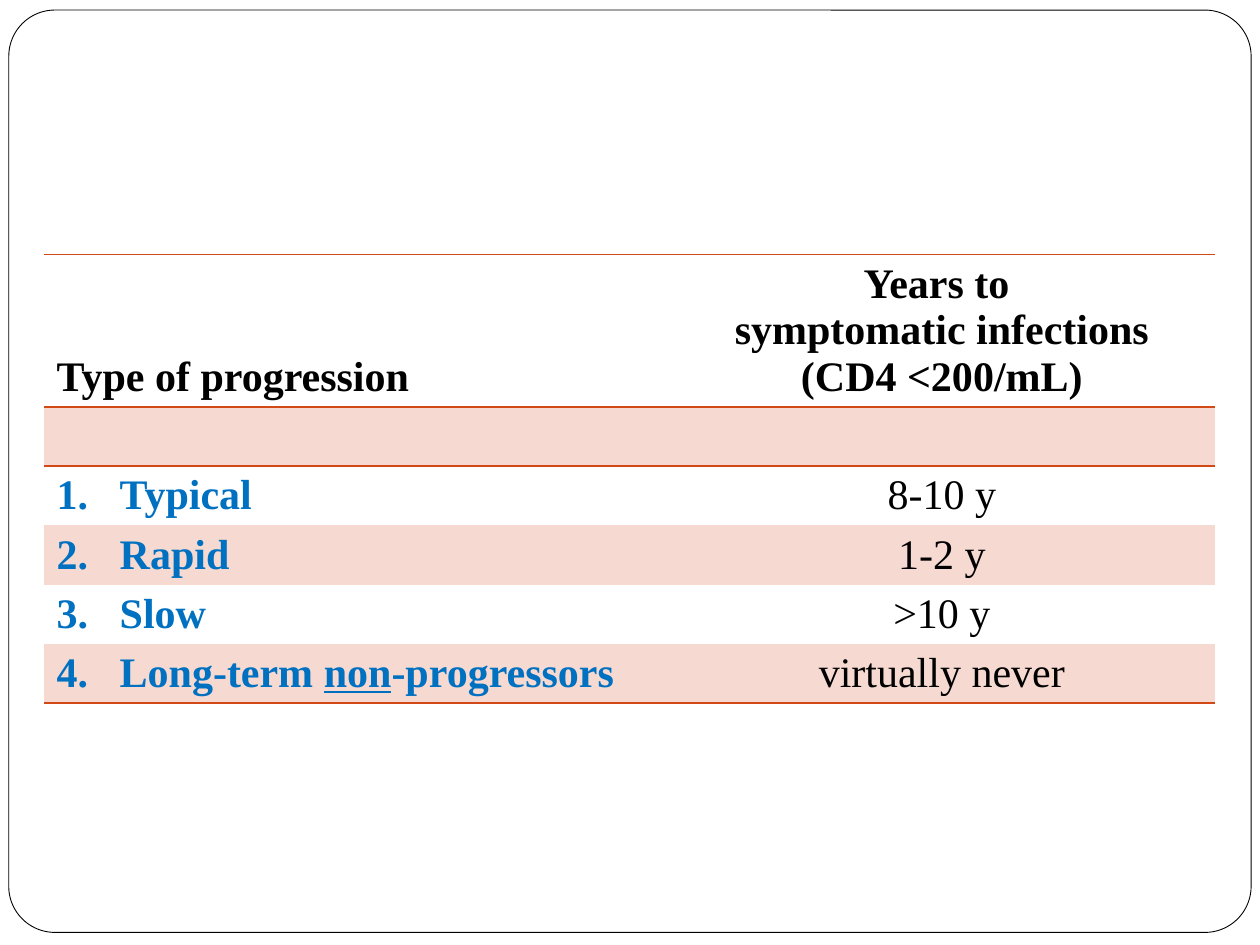
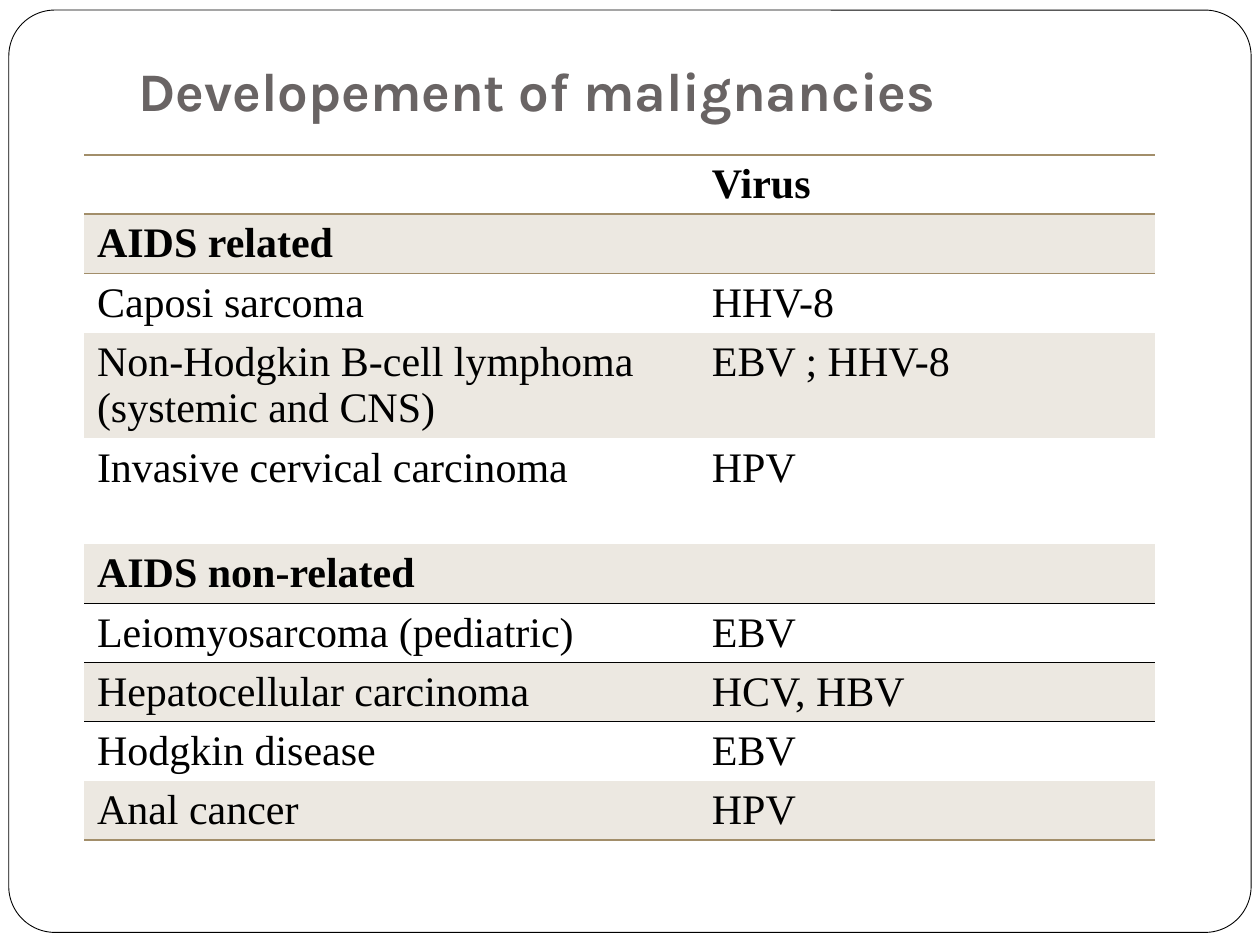
from pptx import Presentation
from pptx.dml.color import RGBColor
from pptx.enum.shapes import MSO_SHAPE
from pptx.enum.text import MSO_ANCHOR, PP_ALIGN
from pptx.oxml import parse_xml
from pptx.oxml.ns import nsdecls
from pptx.util import Inches, Pt

BLACK = RGBColor(0x00, 0x00, 0x00)
WHITE = RGBColor(0xFF, 0xFF, 0xFF)
BLUE = RGBColor(0x00, 0x70, 0xC0)
TITLE_GRAY = RGBColor(0x69, 0x64, 0x64)
ORANGE = RGBColor(0xD3, 0x48, 0x17)
ORANGE_TINT = RGBColor(0xF6, 0xDA, 0xD1)
TAN = RGBColor(0xA2, 0x8E, 0x6A)
TAN_TINT = RGBColor(0xEC, 0xE8, 0xE1)

PLAIN_TABLE_STYLE = "{2D5ABB26-0587-4C30-8999-92F81FD0307C}"
BODY_FORMAT = {"name": "Times New Roman", "size": Pt(24), "bold": False}
TITLE_FORMAT = {"name": "Karla", "size": Pt(31), "bold": True}


def add_run(paragraph, text, text_format, color):
    run = paragraph.add_run()
    run.text = text
    for attribute, value in text_format.items():
        setattr(run.font, attribute, value)
    run.font.color.rgb = color


def add_ruled_table(slide, rows, bold_rows, place, widths, heights, tint, rules):
    left, top = place
    frame = slide.shapes.add_table(
        len(rows), len(widths), Inches(left), Inches(top),
        Inches(sum(widths)), Inches(sum(heights)))
    table = frame.table
    table.first_row = table.horz_banding = False
    frame.element.xpath(".//a:tableStyleId")[0].text = PLAIN_TABLE_STYLE
    for column, width in zip(table.columns, widths):
        column.width = Inches(width)
    for index, (texts, height) in enumerate(zip(rows, heights)):
        table.rows[index].height = Inches(height)
        for cell, text in zip(table.rows[index].cells, texts):
            if index % 2:
                cell.fill.solid()
                cell.fill.fore_color.rgb = tint
            else:
                cell.fill.background()
            properties = cell._tc.get_or_add_tcPr()
            for edge, line in (("lnB", index + 1), ("lnT", index)):
                if line in rules:
                    properties.insert(0, parse_xml(
                        f'<a:{edge} {nsdecls("a")} w="12700"><a:solidFill>'
                        f'<a:srgbClr val="{rules[line]}"/></a:solidFill></a:{edge}>'))
            for number, line_text in enumerate(text.split("\n") if text else []):
                text_frame = cell.text_frame
                paragraph = text_frame.add_paragraph() if number else text_frame.paragraphs[0]
                add_run(paragraph, line_text,
                        {**BODY_FORMAT, "bold": index in bold_rows}, BLACK)
    return table


presentation = Presentation()
presentation.slide_width = Inches(10)
presentation.slide_height = Inches(7.5)

slides = []
for _ in range(2):
    slide = presentation.slides.add_slide(presentation.slide_layouts[6])
    border = slide.shapes.add_shape(
        MSO_SHAPE.ROUNDED_RECTANGLE, Inches(0.07), Inches(0.08), Inches(9.86), Inches(7.32))
    border.adjustments[0] = 0.05
    border.shadow.inherit = False
    border.fill.solid()
    border.fill.fore_color.rgb = WHITE
    border.line.color.rgb = BLACK
    border.line.width = Pt(0.5)
    slides.append(slide)
progression_slide, malignancy_slide = slides

progression_types = [
    ("Typical", "8-10 y"),
    ("Rapid", "1-2 y"),
    ("Slow", ">10 y"),
    ("Long-term |non|-progressors", "virtually never"),
]
progression_rows = [
    ("Type of progression", "Years to \nsymptomatic infections\n(CD4 <200/mL)"),
    ("", ""),
] + [("", years) for _, years in progression_types]
progression_table = add_ruled_table(
    progression_slide, progression_rows, {0}, (0.35, 2.02), (4.96, 4.33),
    [1.21] + [0.47] * 5, ORANGE_TINT, {0: ORANGE, 1: ORANGE, 6: ORANGE})
progression_table.cell(0, 0).vertical_anchor = MSO_ANCHOR.BOTTOM
for row in progression_table.rows:
    for paragraph in row.cells[1].text_frame.paragraphs:
        paragraph.alignment = PP_ALIGN.CENTER

for number, (name, _) in enumerate(progression_types, start=1):
    paragraph = progression_table.cell(number + 1, 0).text_frame.paragraphs[0]
    properties = paragraph._p.get_or_add_pPr()
    properties.set("marL", str(Inches(0.5)))
    properties.set("indent", str(Inches(-0.5)))
    properties.append(parse_xml(
        f'<a:buAutoNum {nsdecls("a")} type="arabicPeriod" startAt="{number}"/>'))
    for part, text in enumerate(name.split("|")):
        add_run(paragraph, text,
                {**BODY_FORMAT, "bold": True, "underline": part == 1}, BLUE)

malignancy_rows = [
    ("", "Virus"),
    ("AIDS related", ""),
    ("Caposi sarcoma", "HHV-8"),
    ("Non-Hodgkin B-cell lymphoma\n(systemic and CNS)", "EBV ; HHV-8"),
    ("Invasive cervical carcinoma", "HPV"),
    ("AIDS non-related", ""),
    ("Leiomyosarcoma (pediatric)", "EBV"),
    ("Hepatocellular carcinoma", "HCV, HBV"),
    ("Hodgkin disease", "EBV"),
    ("Anal cancer", "HPV"),
]
add_ruled_table(
    malignancy_slide, malignancy_rows, {0, 1, 5}, (0.67, 1.23), (4.88, 3.62),
    [0.47] * 3 + [0.84] * 2 + [0.47] * 5, TAN_TINT,
    {0: TAN, 1: TAN, 6: BLACK, 7: BLACK, 10: TAN})

title = malignancy_slide.shapes.add_textbox(
    Inches(1), Inches(0.3), Inches(8.5), Inches(0.77))
title_format = {
    "word_wrap": True,
    "vertical_anchor": MSO_ANCHOR.BOTTOM,
    "margin_bottom": Inches(0.1),
}
for attribute, value in title_format.items():
    setattr(title.text_frame, attribute, value)
add_run(title.text_frame.paragraphs[0], "Developement of malignancies",
        TITLE_FORMAT, TITLE_GRAY)

presentation.save("out.pptx")
